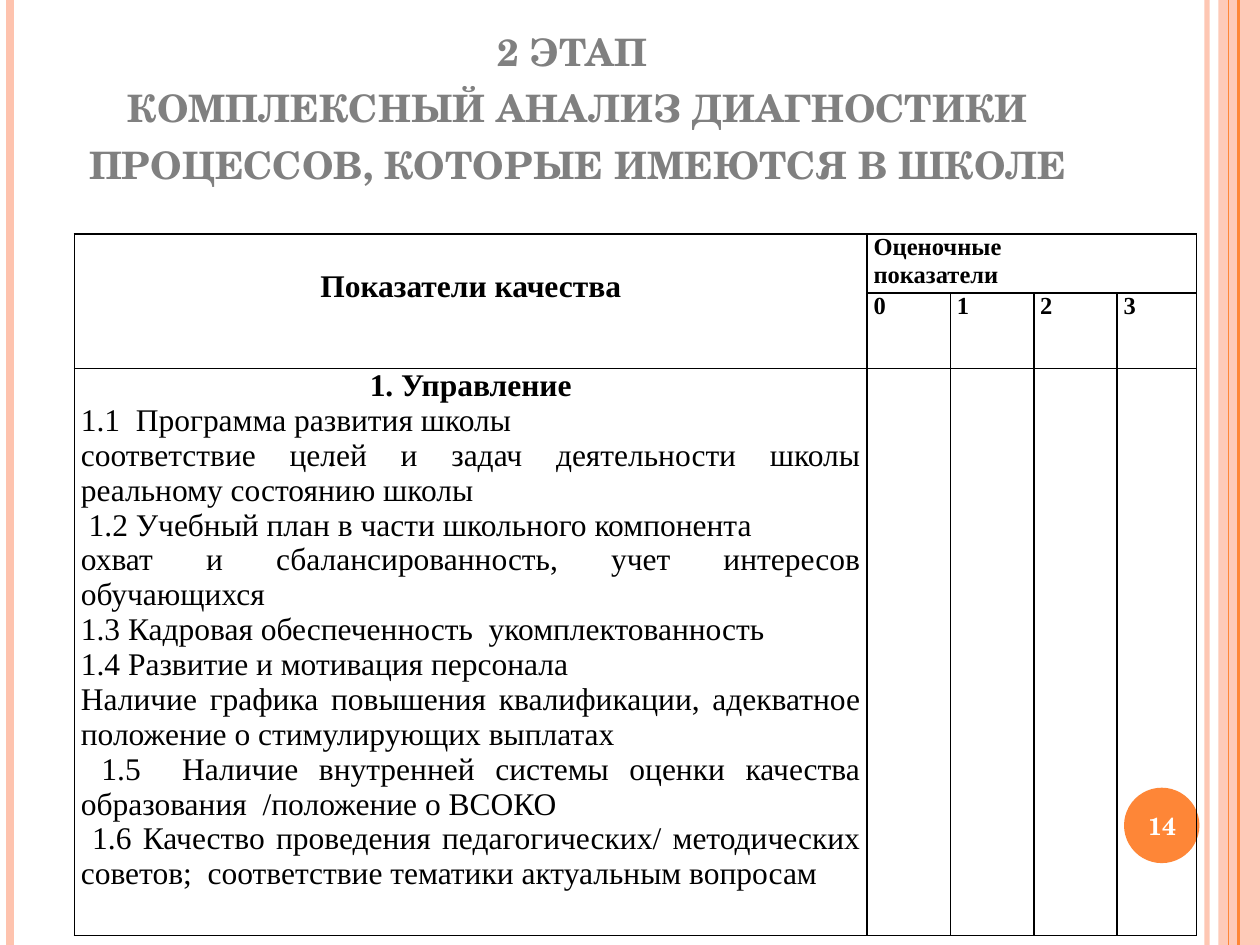
"""Builds the slide about the second stage of school diagnostics."""
from dataclasses import dataclass

import pptx
import pptx.dml.color
import pptx.enum.shapes
import pptx.enum.text
import pptx.oxml
import pptx.oxml.ns
import pptx.util
from lxml import etree

Cm = pptx.util.Cm
Pt = pptx.util.Pt
Align = pptx.enum.text.PP_ALIGN
Anchor = pptx.enum.text.MSO_ANCHOR
Shape = pptx.enum.shapes.MSO_SHAPE


@dataclass(frozen=True)
class Theme:
    """Colours, fonts and type sizes of the slide."""
    peach: str = "FEC3AE"
    orange: str = "FE8637"
    grey: str = "808080"
    black: str = "000000"
    white: str = "FFFFFF"
    serif: str = "TeX Gyre Schola"
    body: str = "Times New Roman"
    title: int = 27
    text: int = 18
    small: int = 14


THEME = Theme()
SIDE = 25.4
HIGH = 19.05
BARS = [
    (24.33, THEME.peach, 3, 93),
    (0.2, THEME.peach, 4.5, 100),
    (24.97, THEME.orange, 1.5, 100),
    (24.77, THEME.orange, 0.75, 100),
]
COLS = [15.98, 1.68, 1.68, 1.68, 1.6]
ROWS = [1.17, 1.52, 11.43]
MARKS = ["0", "1", "2", "3"]
TITLE = ["2 этап ", "комплексный анализ диагностики процессов, которые имеются в школе"]
ITEMS = [
    "1.1  Программа развития школы",
    "соответствие целей и задач деятельности школы реальному состоянию школы",
    " 1.2 Учебный план в части школьного компонента",
    "охват и сбалансированность, учет интересов обучающихся",
    "1.3 Кадровая обеспеченность  укомплектованность",
    "1.4 Развитие и мотивация персонала",
    "Наличие графика повышения квалификации, адекватное положение о стимулирующих выплатах",
    " 1.5  Наличие внутренней системы оценки качества образования  /положение о ВСОКО",
    " 1.6 Качество проведения педагогических/ методических советов;  соответствие тематики актуальным вопросам",
]


def paint(color, tone, solid=100):
    """Set a colour and its opacity in percent."""
    color.rgb = pptx.dml.color.RGBColor.from_string(tone)
    if solid < 100:
        node = color._xFill.find(pptx.oxml.ns.qn("a:srgbClr"))
        etree.SubElement(node, pptx.oxml.ns.qn("a:alpha"), val=str(solid * 1000))


def write(para, text, size, font=THEME.body, tone=THEME.black, bold=False):
    """Add one formatted run to a paragraph."""
    run = para.add_run()
    run.text = text
    run.font.size = Pt(size)
    run.font.name = font
    run.font.bold = bold
    paint(run.font.color, tone)
    return run


def fill_in(frame, lines, size, align, bold=False):
    """Write each line as a paragraph, starting with a free first one."""
    for line in lines:
        last = frame.paragraphs[-1]
        para = frame.add_paragraph() if last.runs else last
        para.alignment = align
        write(para, line, size, bold=bold)


def add_bar(slide, x, tone, width, solid):
    """Draw a vertical line over the full height of the slide."""
    bar = slide.shapes.add_connector(
        pptx.enum.shapes.MSO_CONNECTOR.STRAIGHT, Cm(x), 0, Cm(x), Cm(HIGH))
    bar.line.width = Pt(width)
    bar.line.fill.solid()
    paint(bar.line.fill.fore_color, tone, solid)
    etree.SubElement(bar._element.spPr, pptx.oxml.ns.qn("a:effectLst"))


def add_form(slide, kind, box, tone, solid=100):
    """Draw a filled shape without outline."""
    form = slide.shapes.add_shape(kind, *map(Cm, box))
    form.shadow.inherit = False
    form.line.fill.background()
    form.fill.solid()
    paint(form.fill.fore_color, tone, solid)


def add_title(slide):
    """Place and format the title placeholder."""
    title = slide.shapes.title
    title.left, title.top, title.width, title.height = map(Cm, (1.27, 0.76, 20.75, 3.18))
    frame = title.text_frame
    frame.auto_size = pptx.enum.text.MSO_AUTO_SIZE.NONE
    frame.vertical_anchor = Anchor.BOTTOM
    para = frame.paragraphs[0]
    para.alignment = Align.CENTER
    for rank, line in enumerate(TITLE):
        if rank:
            para.add_line_break()
        run = write(para, line, THEME.title, THEME.serif, THEME.grey, True)
        run.font._element.set("cap", "small")


def add_note(slide, box, text, size, tone, align, anchor, bold=False):
    """Add a text box with one run."""
    frame = slide.shapes.add_textbox(*map(Cm, box)).text_frame
    frame.word_wrap = True
    frame.vertical_anchor = anchor
    para = frame.paragraphs[0]
    para.alignment = align
    write(para, text, size, THEME.serif, tone, bold)


def style(cell):
    """Give a cell thin borders, tight margins and no fill."""
    cell.margin_left = cell.margin_right = Cm(0.13)
    cell.margin_top = cell.margin_bottom = 0
    props = cell._tc.get_or_add_tcPr()
    for side in ("lnL", "lnR", "lnT", "lnB"):
        props.append(pptx.oxml.parse_xml(
            f'<a:{side} {pptx.oxml.ns.nsdecls("a")} w="12700"><a:solidFill>'
            f'<a:srgbClr val="{THEME.black}"/></a:solidFill></a:{side}>'))
    cell.fill.background()


def add_grid(slide):
    """Build the table of quality indicators."""
    grid = slide.shapes.add_table(
        len(ROWS), len(COLS), Cm(1.5), Cm(4.72), Cm(sum(COLS)), Cm(sum(ROWS))).table
    grid.first_row = grid.horz_banding = False
    for col, width in zip(grid.columns, COLS):
        col.width = Cm(width)
    for row, height in zip(grid.rows, ROWS):
        row.height = Cm(height)
    for cell in grid.iter_cells():
        style(cell)
    head, score, main_cell = grid.cell(0, 0), grid.cell(0, 1), grid.cell(2, 0)
    head.merge(grid.cell(1, 0))
    score.merge(grid.cell(0, 4))
    head.margin_top = Cm(0.71)
    fill_in(head.text_frame, ["Показатели качества"], THEME.text, Align.CENTER, True)
    fill_in(score.text_frame, ["Оценочные", "показатели"], THEME.small, Align.JUSTIFY, True)
    for rank, mark in enumerate(MARKS, 1):
        fill_in(grid.cell(1, rank).text_frame, [mark], THEME.small, Align.JUSTIFY, True)
    fill_in(main_cell.text_frame, ["1. Управление"], THEME.text, Align.CENTER, True)
    fill_in(main_cell.text_frame, ITEMS, THEME.text, Align.JUSTIFY)


def main():
    """Build and save the slide."""
    deck = pptx.Presentation()
    deck.slide_width, deck.slide_height = Cm(SIDE), Cm(HIGH)
    slide = deck.slides.add_slide(deck.slide_layouts.get_by_name("Title Only"))
    add_form(slide, Shape.RECTANGLE, (24.56, 0, 0.84, HIGH), THEME.peach, 87)
    for bar in BARS:
        add_bar(slide, *bar)
    add_form(slide, Shape.OVAL, (22.66, 15.88, 1.52, 1.52), THEME.orange)
    add_title(slide)
    add_note(slide, (6.35, 8.64, 12.7, 1.02), ".", THEME.text, THEME.black,
             Align.LEFT, Anchor.TOP)
    add_grid(slide)
    add_note(slide, (22.58, 15.93, 1.7, 1.45), "14", THEME.small, THEME.white,
             Align.CENTER, Anchor.MIDDLE, True)
    deck.save("out.pptx")


if __name__ == "__main__":
    main()
